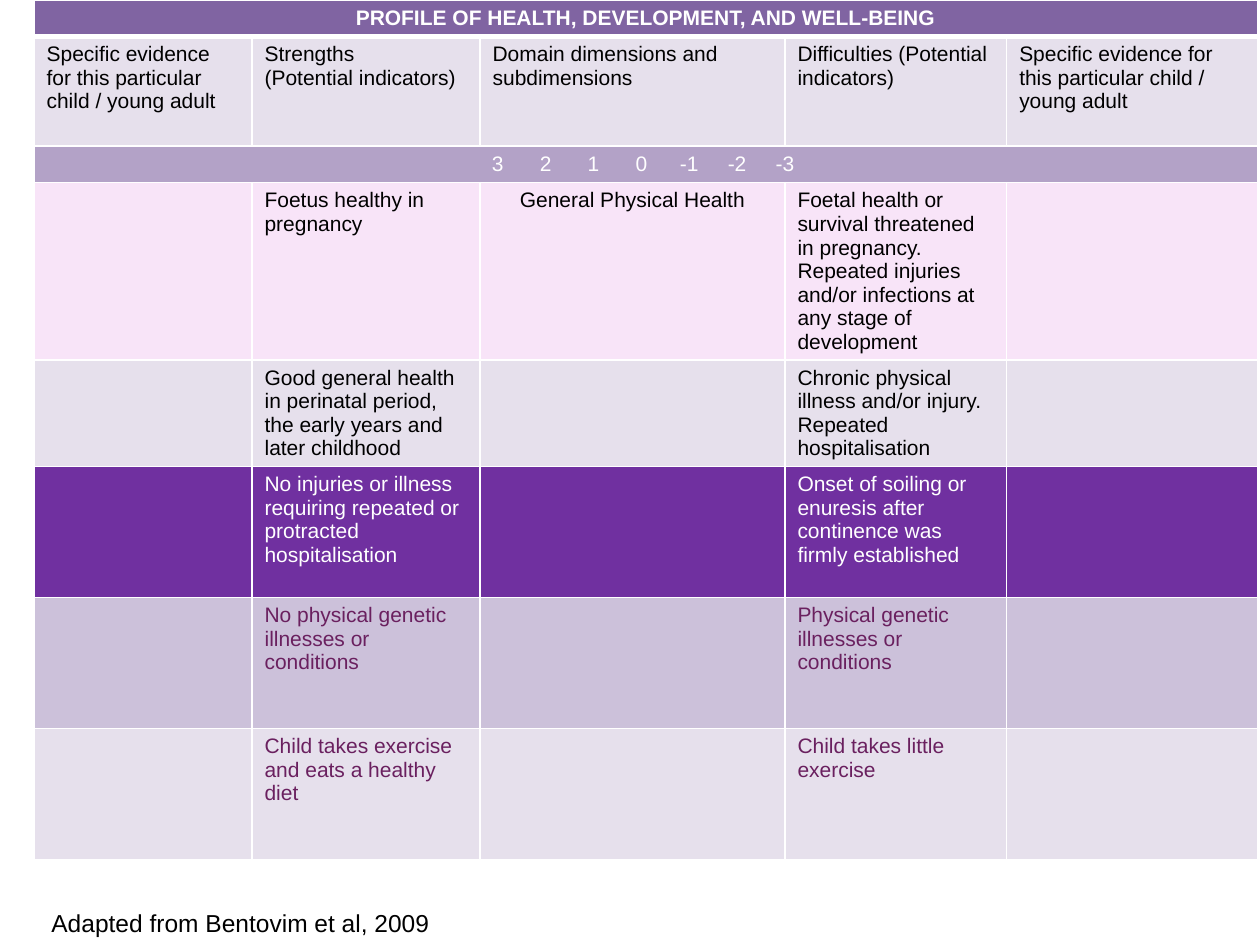
from dataclasses import dataclass

from lxml import etree
from pptx import Presentation
from pptx.dml.color import RGBColor
from pptx.enum.text import PP_ALIGN
from pptx.oxml.ns import qn
from pptx.util import Emu, Inches, Pt

CENTER, LEFT = PP_ALIGN.CENTER, PP_ALIGN.LEFT
FONT = "Arial"
WHITE, BLACK, PLUM = "FFFFFF", "000000", "6A205F"
VIOLET, LILAC, PALE = "8064A2", "B3A2C7", "E6E0EC"
PINK, PURPLE, MAUVE = "F8E4F8", "7030A0", "CCC1DA"
WIDTHS = (1.73, 1.81, 2.42, 1.76, 1.99)
SCORES = ("3", "2", "1", "0", "-1", "-2", "-3")
EVIDENCE = "Specific evidence for this particular child / young adult"


@dataclass
class Row:
    height: float
    fill: str
    ink: str
    texts: tuple[str, ...]
    bold: bool = False
    middle: PP_ALIGN = LEFT

    @property
    def merged(self) -> bool:
        return len(self.texts) == 1


ROWS = (
    Row(0.29, VIOLET, WHITE, ("PROFILE OF HEALTH, DEVELOPMENT, AND WELL-BEING",), bold=True),
    Row(0.87, PALE, BLACK, (
        EVIDENCE, "Strengths\n(Potential indicators)",
        "Domain dimensions and subdimensions",
        "Difficulties (Potential indicators)", EVIDENCE)),
    Row(0.29, LILAC, WHITE, ("".join("\t" + score for score in SCORES),)),
    Row(1.35, PINK, BLACK, (
        "", "Foetus healthy in pregnancy", "General Physical Health",
        "Foetal health or survival threatened in pregnancy. Repeated injuries "
        "and/or infections at any stage of development", ""), middle=CENTER),
    Row(0.81, PALE, BLACK, (
        "", "Good general health in perinatal period, the early years and later childhood", "",
        "Chronic physical illness and/or injury.\nRepeated hospitalisation", "")),
    Row(1.04, PURPLE, WHITE, (
        "", "No injuries or illness requiring repeated or protracted hospitalisation", "",
        "Onset of soiling or enuresis after continence was firmly established", "")),
    Row(1.04, MAUVE, PLUM, (
        "", "No physical genetic illnesses or conditions", "",
        "Physical genetic illnesses or conditions", "")),
    Row(1.04, PALE, PLUM, (
        "", "Child takes exercise and eats a healthy diet", "",
        "Child takes little exercise", "")),
)


def color(code: str) -> RGBColor:
    return RGBColor.from_string(code)


def write(frame, text: str, size: float, ink: str, bold: bool = False,
          align: PP_ALIGN = LEFT) -> None:
    """Write one paragraph per line of text."""
    for i, line in enumerate(text.split("\n")):
        para = frame.add_paragraph() if i else frame.paragraphs[0]
        para.alignment = align
        run = para.add_run()
        run.text = line
        font = run.font
        font.name, font.size, font.bold = FONT, Pt(size), bold
        font.color.rgb = color(ink)


def set_tabs(para, start: float, step: float, count: int) -> None:
    """Add evenly spaced centred tab stops."""
    tabs = etree.SubElement(para._p.get_or_add_pPr(), qn("a:tabLst"))
    for i in range(count):
        etree.SubElement(tabs, qn("a:tab"), pos=str(Inches(start + i * step)), algn="ctr")


def style_cell(cell, fill: str, top: float, bottom: float) -> None:
    """Set white borders, widths in points, and then the fill."""
    props = cell._tc.get_or_add_tcPr()
    for side, width in (("L", 1), ("R", 1), ("T", top), ("B", bottom)):
        line = etree.SubElement(props, qn(f"a:ln{side}"), w=str(Pt(width)))
        paint = etree.SubElement(line, qn("a:solidFill"))
        etree.SubElement(paint, qn("a:srgbClr"), val=WHITE)
    cell.fill.solid()
    cell.fill.fore_color.rgb = color(fill)


def draw_table(slide) -> None:
    heights = [Inches(row.height) for row in ROWS]
    widths = [Inches(width) for width in WIDTHS]
    table = slide.shapes.add_table(
        len(ROWS), len(WIDTHS), Inches(0.27), Inches(0),
        Emu(sum(widths)), Emu(sum(heights))).table
    table.first_row = table.horz_banding = False
    for col, width in zip(table.columns, widths):
        col.width = width
    for r, (row, height) in enumerate(zip(ROWS, heights)):
        table.rows[r].height = height
        for c in range(len(WIDTHS)):
            style_cell(table.cell(r, c), row.fill, 3 if r == 1 else 1, 3 if r == 0 else 1)
        if row.merged:
            table.cell(r, 0).merge(table.cell(r, len(WIDTHS) - 1))
        for c, text in enumerate(row.texts):
            if not text:
                continue
            frame = table.cell(r, c).text_frame
            align = row.middle if c == 2 else LEFT
            if row.merged and "\t" not in text:
                align = CENTER
            write(frame, text, 12, row.ink, row.bold, align)
            if "\t" in text:
                set_tabs(frame.paragraphs[0], 3.58, 0.38, len(SCORES))


def main() -> None:
    deck = Presentation()
    deck.slide_width, deck.slide_height = Inches(10), Inches(7.5)
    slide = deck.slides.add_slide(deck.slide_layouts[6])
    draw_table(slide)
    note = slide.shapes.add_textbox(Inches(0.31), Inches(7.16), Inches(4.67), Inches(0.34))
    note.text_frame.word_wrap = True
    write(note.text_frame, "Adapted from Bentovim et al, 2009", 14, BLACK)
    deck.save("out.pptx")


if __name__ == "__main__":
    main()
